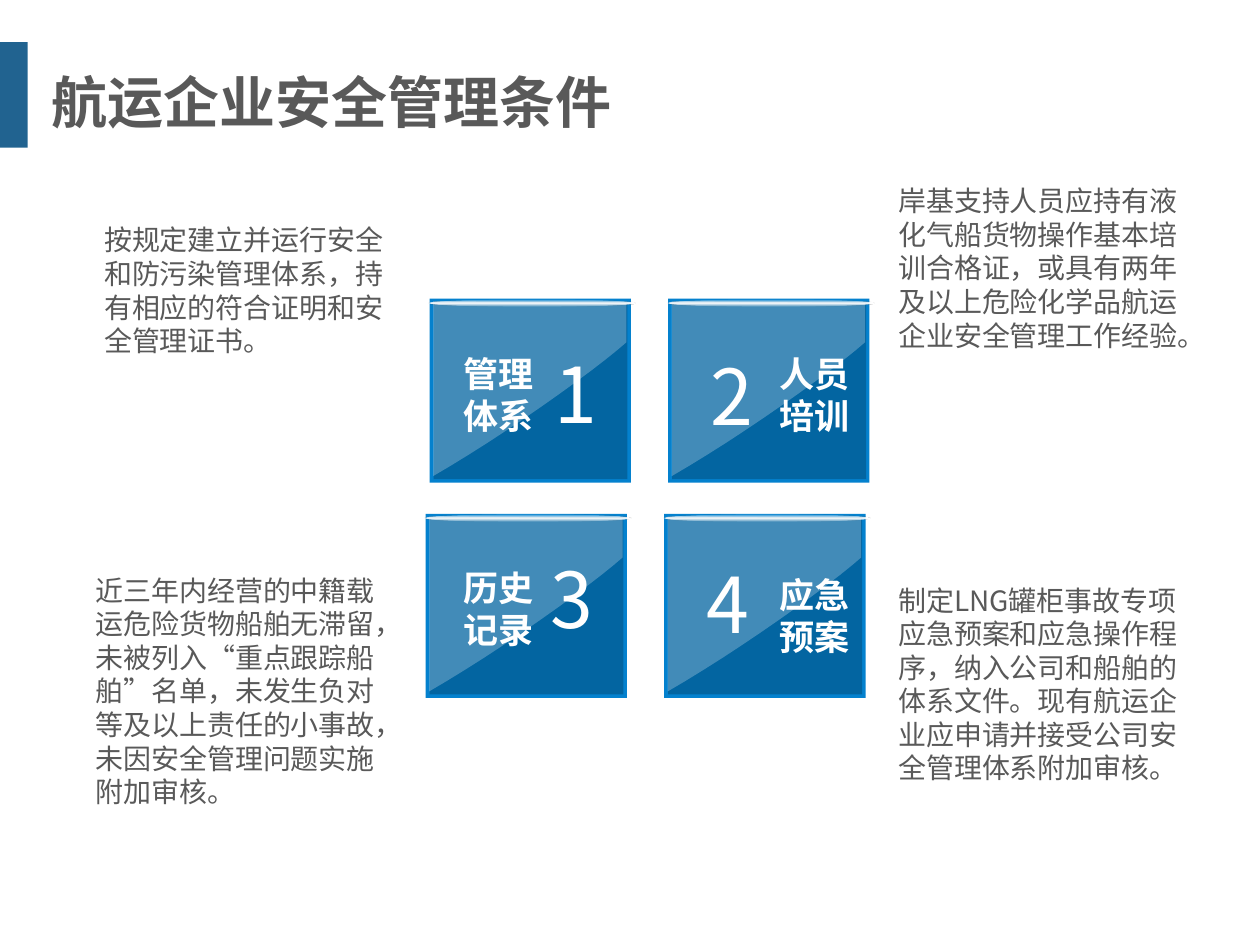
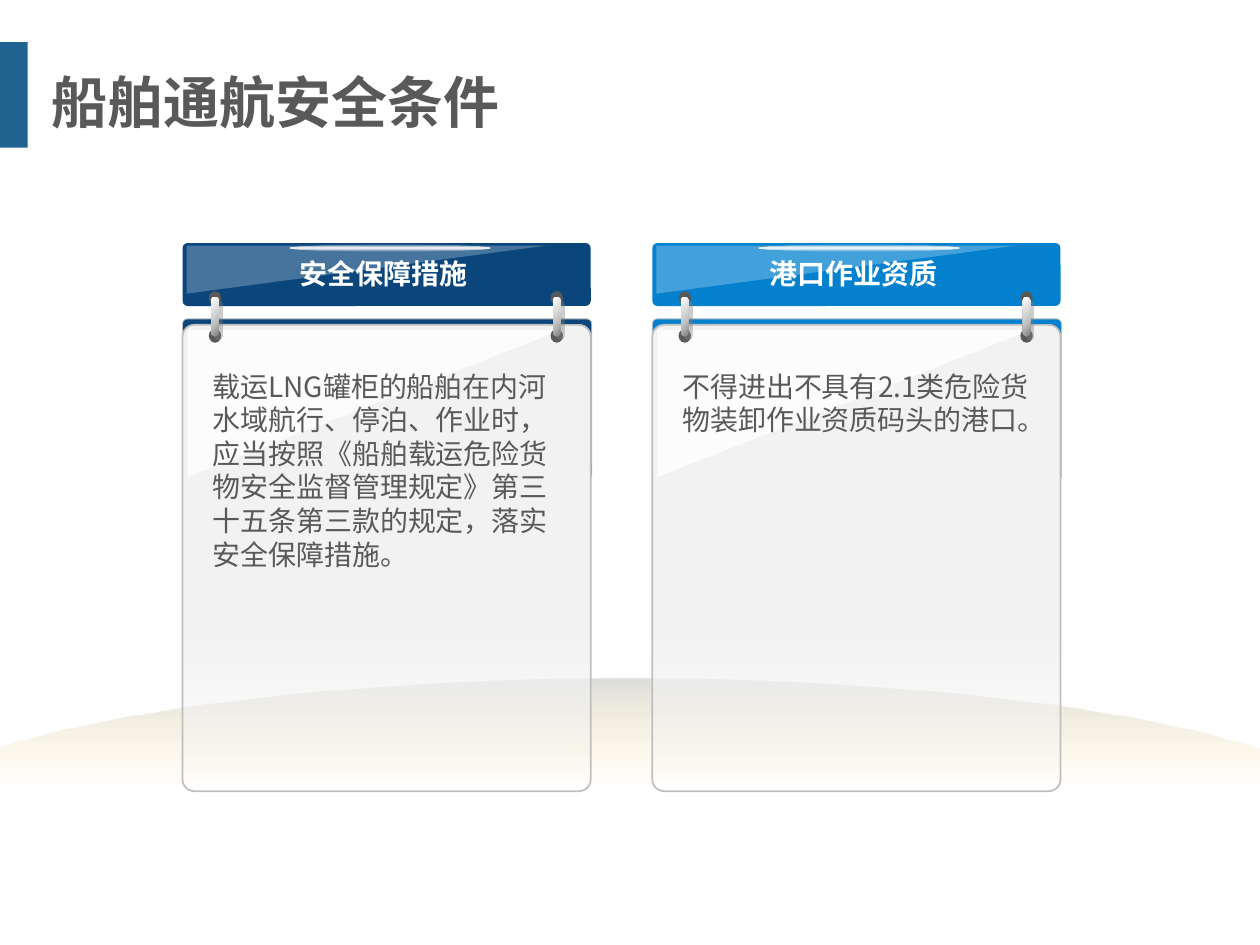
from lxml.etree import SubElement
from pptx import Presentation
from pptx.dml.color import RGBColor
from pptx.enum.shapes import MSO_SHAPE as SHAPE
from pptx.enum.text import MSO_ANCHOR as ANCHOR, MSO_AUTO_SIZE as FIT, PP_ALIGN as ALIGN
from pptx.oxml import parse_xml
from pptx.oxml.ns import nsdecls, qn
from pptx.util import Cm, Pt

FONT = "Noto Sans CJK SC"
DIGIT_FONT = "Noto Sans CJK KR"
COLORS = {
    "white": "FFFFFF", "text": "595959", "band": "095385",
    "blue": "0481CE", "deep": "0365A1", "navy": "0A467C",
    "border": "BFBFBF", "panel": "F2F2F2", "gray": "808080", "gold": "FFC000",
}
LINEAR = '<a:lin ang="{}" scaled="0"/>'
CENTER = '<a:path path="shape"><a:fillToRect l="50000" t="50000" r="50000" b="50000"/></a:path>'
GLEAM = ([(0, "white", 100), (100, "white", 0)], CENTER)
PANEL = ([(65, "panel", 100), (99, "panel", 0)], LINEAR.format(5400000))
METAL = ([(0, "gray", 100), (35, "border", 100), (100, "white", 100)], LINEAR.format(13500000))
HILL = ([(63, "gold", 0), (100, "gray", 26)], LINEAR.format(16200000))

TITLE = {"size": Pt(32), "bold": True}
BODY = {"size": Pt(16)}
TILE_LABEL = {"size": Pt(20), "bold": True, "color": "white"}
CARD_LABEL = {"size": Pt(16), "bold": True, "color": "white"}
DIGIT = {"size": Pt(44), "name": DIGIT_FONT, "color": "white"}

TILES = [
    ("1", (10.92, 6.86, 1.68, 2.44), "管理体系", (8.89, 6.98),
     "按规定建立并运行安全和防污染管理体系，持有相应的符合证明和安全管理证书。", (1.85, 4.37)),
    ("2", (14.07, 6.91, 1.5, 2.13), "人员培训", (15.27, 6.98),
     "岸基支持人员应持有液化气船货物操作基本培训合格证，或具有两年及以上危险化学品航运企业安全管理工作经验。",
     (17.86, 3.58)),
    ("3", (10.85, 11, 1.37, 2.13), "历史记录", (8.89, 11.3),
     "近三年内经营的中籍载运危险货物船舶无滞留，未被列入“重点跟踪船舶”名单，未发生负对等及以上责任的小事故，"
     "未因安全管理问题实施附加审核。", (1.68, 11.43)),
    ("4", (14, 11.1, 1.37, 2.13), "应急预案", (15.27, 11.43),
     "制定LNG罐柜事故专项应急预案和应急操作程序，纳入公司和船舶的体系文件。现有航运企业应申请并接受公司安全管理体系附加审核。",
     (17.86, 11.63)),
]
CARDS = [
    ("安全保障措施", "navy",
     "载运LNG罐柜的船舶在内河水域航行、停泊、作业时，应当按照《船舶载运危险货物安全监督管理规定》"
     "第三十五条第三款的规定，落实安全保障措施。"),
    ("港口作业资质", "blue", "不得进出不具有2.1类危险货物装卸作业资质码头的港口。"),
]


def rgb(name):
    return RGBColor.from_string(COLORS[name])


def place(sp, box):
    for key, value in zip(("left", "top", "width", "height"), box):
        setattr(sp, key, Cm(value))


def paint(sp, fill, alpha=100):
    if isinstance(fill, str):
        sp.fill.solid()
        sp.fill.fore_color.rgb = rgb(fill)
        if alpha < 100:
            color = sp.element.spPr.find(qn("a:solidFill"))[0]
            SubElement(color, qn("a:alpha"), val=str(alpha * 1000))
        return
    stops, direction = fill
    marks = "".join(
        f'<a:gs pos="{pos * 1000}"><a:srgbClr val="{COLORS[name]}">'
        f'<a:alpha val="{opacity * 1000}"/></a:srgbClr></a:gs>'
        for pos, name, opacity in stops)
    sp.fill.background()
    spPr = sp.element.spPr
    spPr.replace(spPr.find(qn("a:noFill")), parse_xml(
        f'<a:gradFill rotWithShape="1" {nsdecls("a")}><a:gsLst>{marks}</a:gsLst>{direction}</a:gradFill>'))


def finish(sp, fill, alpha=100, line=None):
    sp.shadow.inherit = False
    paint(sp, fill, alpha)
    if line:
        sp.line.color.rgb = rgb("border")
        sp.line.width = Pt(line)
    else:
        sp.line.fill.background()
    return sp


def add_shape(shapes, kind, box, fill, alpha=100, line=None, adj=None, rotation=0):
    sp = shapes.add_shape(kind, *map(Cm, box))
    if adj is not None:
        sp.adjustments[0] = adj
    sp.rotation = rotation
    return finish(sp, fill, alpha, line)


def write(tf, text, fmt, align=ALIGN.LEFT, spacing=1.2):
    p = tf.paragraphs[0]
    p.alignment = align
    p.line_spacing = Pt(fmt["size"].pt * spacing)
    r = p.add_run()
    r.text = text
    fmt = {"name": FONT, "bold": False, "color": "text", **fmt}
    r.font.color.rgb = rgb(fmt.pop("color"))
    for key, value in fmt.items():
        setattr(r.font, key, value)
    latin = r.font._element.find(qn("a:latin"))
    latin.addnext(parse_xml(f'<a:ea typeface="{fmt["name"]}" {nsdecls("a")}/>'))


def add_text(shapes, box, text, fmt, wrap=True, fit=FIT.NONE, anchor=ANCHOR.TOP, **para):
    tf = shapes.add_textbox(*map(Cm, box)).text_frame
    for key, value in {"word_wrap": wrap, "auto_size": fit, "vertical_anchor": anchor}.items():
        setattr(tf, key, value)
    write(tf, text, fmt, **para)


def add_band(prs, layout):
    s = prs.slides[0]
    band = add_shape(s.shapes, SHAPE.RECTANGLE, (0, 0.85, 0.56, 2.13), "band", 90)
    layout.shapes.element.insert(2, band.element)


def add_slide(prs, layout, title):
    s = prs.slides.add_slide(layout)
    tf = s.shapes.title.text_frame
    place(s.shapes.title, (0.79, 0.97, 22.33, 2.13))
    tf.vertical_anchor = ANCHOR.MIDDLE
    write(tf, title, TITLE)
    return s


def bezier(a, b, c, d, steps=12):
    for i in range(1, steps + 1):
        t = i / steps
        u = 1 - t
        yield tuple(u**3 * w + 3 * u * u * t * x + 3 * u * t * t * y + t**3 * z
                    for w, x, y, z in zip(a, b, c, d))


def add_shine(shapes, left, top):
    edge = [(3.9, 0.04), (3.9, 0.83),
            *bezier((3.9, 0.83), (3.25, 1.41), (1.38, 2.74), (0, 3.53))]
    fb = shapes.build_freeform(Cm(left), Cm(top))
    fb.add_line_segments([(Cm(left + x), Cm(top + y)) for x, y in edge])
    finish(fb.convert_to_shape(), "white", 25)


def add_tile(s, index, number, number_box, label, label_at, body, body_at):
    row, col = divmod(index, 2)
    left = 8.66 + 4.81 * col - 0.08 * row
    top = 6.02 + 4.34 * row
    shapes = s.shapes.add_group_shape().shapes
    add_shape(shapes, SHAPE.RECTANGLE, (left, top, 4.06, 3.71), "blue")
    add_shape(shapes, SHAPE.RECTANGLE, (left + 0.08, top + 0.06, 3.91, 3.58), "deep")
    add_shape(shapes, SHAPE.OVAL, (left - 0.02, top + 0.02, 4.17, 0.13), GLEAM)
    add_shine(shapes, left + 0.07, top + 0.05)
    add_text(shapes, number_box, number, DIGIT, wrap=False, fit=FIT.SHAPE_TO_FIT_TEXT)
    add_text(shapes, (*label_at, 2.11, 1.96), label, TILE_LABEL, align=ALIGN.RIGHT)
    add_text(s.shapes, (*body_at, 6.65, 4.57), body, BODY)


def add_ring(shapes, left):
    for top in (6.63, 5.87):
        add_shape(shapes, SHAPE.OVAL, (left, top, 0.25, 0.28), "text")
    pin = add_shape(shapes, SHAPE.ROUNDED_RECTANGLE, (left + 0.05, 5.99, 0.15, 0.79), METAL, adj=0.5)
    pin.element.spPr.find(qn("a:effectLst")).append(parse_xml(
        f'<a:outerShdw dist="38100" dir="2700000" {nsdecls("a")}>'
        f'<a:srgbClr val="{COLORS["gray"]}"><a:alpha val="40000"/></a:srgbClr></a:outerShdw>'))


def add_card(s, index, label, color, body):
    left = 3.68 + 9.47 * index
    shapes = s.shapes.add_group_shape().shapes
    block, corner = SHAPE.ROUNDED_RECTANGLE, SHAPE.ISOSCELES_TRIANGLE
    add_shape(shapes, block, (left, 4.9, 8.23, 1.27), color, adj=0.083)
    add_shape(shapes, SHAPE.OVAL, (left + 2.13, 4.93, 4.09, 0.13), GLEAM)
    add_shape(shapes, corner, (left + 0.08, 4.95, 7.26, 0.97), "white", 25, adj=1, rotation=180)
    add_shape(shapes, block, (left, 6.43, 8.25, 3.25), color, line=0.5, adj=0.029)
    add_shape(shapes, block, (left, 6.55, 8.23, 9.4), PANEL, line=1, adj=0.029)
    add_shape(shapes, corner, (left + 0.1, 6.65, 7.54, 2.97), "white", 79, adj=1, rotation=180)
    for offset in (0.53, 7.42):
        add_ring(shapes, left + offset)
    add_text(shapes, (left + 0.79, 5.11, 6.53, 0.86), label, CARD_LABEL,
             anchor=ANCHOR.MIDDLE, align=ALIGN.CENTER, spacing=1.08)
    add_text(s.shapes, (left + 0.36, 7.32, 7.67, 4.57), body, BODY)


def main():
    prs = Presentation()
    prs.slide_width, prs.slide_height = Cm(25.4), Cm(19.05)
    layout = prs.slide_layouts[5]

    s = add_slide(prs, layout, "航运企业安全管理条件")
    add_band(prs, layout)
    for i, tile in enumerate(TILES):
        add_tile(s, i, *tile)

    s = add_slide(prs, layout, "船舶通航安全条件")
    add_shape(s.shapes, SHAPE.OVAL, (-2.21, 13.69, 29.72, 5.79), HILL)
    for i, card in enumerate(CARDS):
        add_card(s, i, *card)

    prs.save("out.pptx")


if __name__ == "__main__":
    main()
